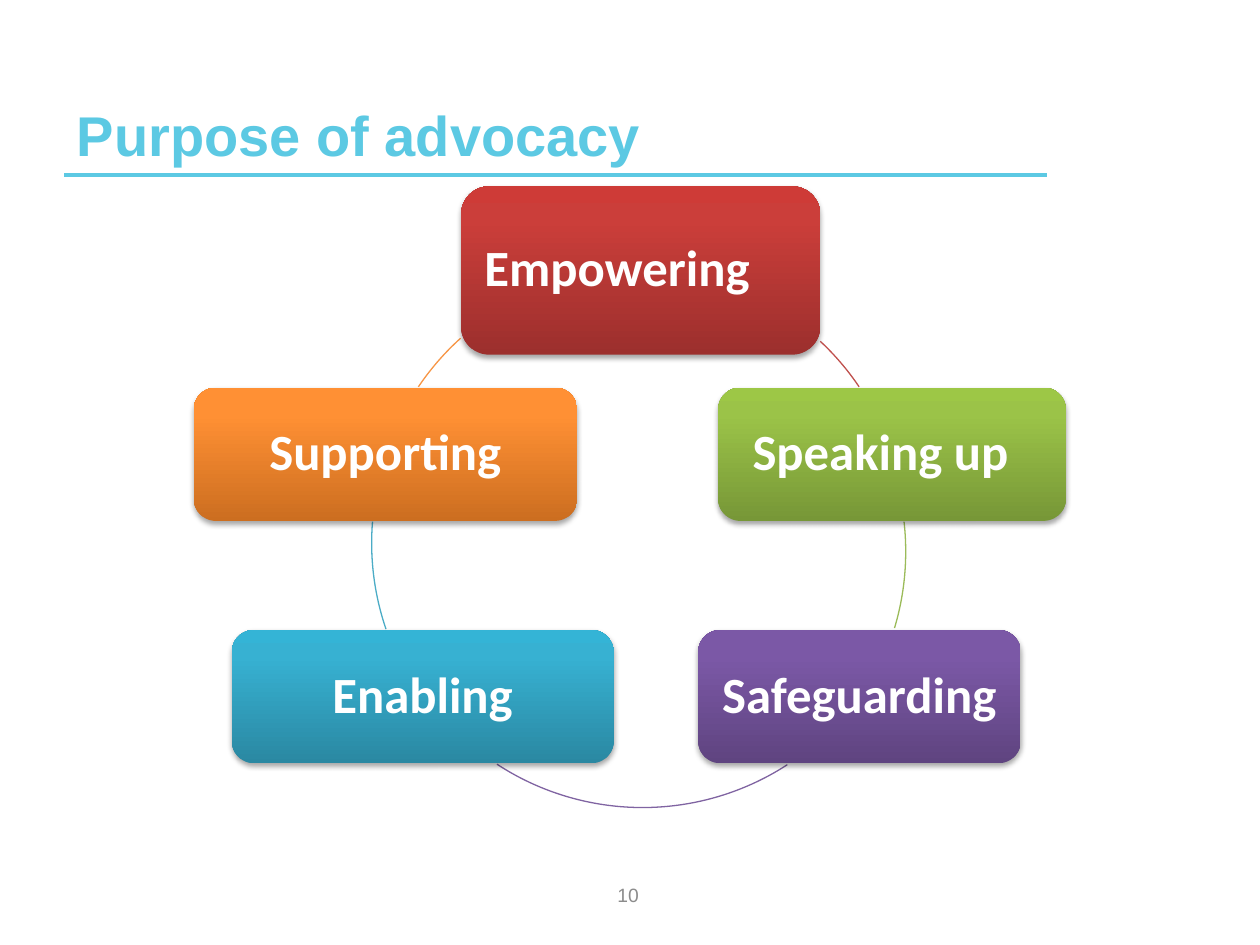
from lxml.etree import SubElement
from pptx import Presentation
from pptx.dml.color import RGBColor
from pptx.enum.shapes import MSO_CONNECTOR, MSO_SHAPE
from pptx.enum.text import MSO_ANCHOR, MSO_AUTO_SIZE, PP_ALIGN
from pptx.oxml import parse_xml
from pptx.oxml.ns import nsdecls, qn
from pptx.util import Pt

TITLE = "Purpose of advocacy"
PAGE_NUMBER = "10"
ACCENT = "5CC9E3"
UPPER_ROW, LOWER_ROW = 221.5, 360
ROW_HEIGHT = 76.2
INSET = 8.64

# text, left, top, width, height, alignment, extra right inset, gradient from bottom to top
BOXES = [
    ("Empowering", 263.5, 106.5, 205.2, 96.2, PP_ALIGN.LEFT, 0, ("9C2F2D", "CB3E3A", "CE3B37")),
    ("Speaking up", 410.4, UPPER_ROW, 198.7, ROW_HEIGHT, PP_ALIGN.CENTER, 13,
     ("779737", "9BC348", "9DC746")),
    ("Safeguarding", 399, LOWER_ROW, 184.3, ROW_HEIGHT, PP_ALIGN.CENTER, 0,
     ("5F4480", "7B58A6", "7C57A8")),
    ("Enabling", 132.5, LOWER_ROW, 218.2, ROW_HEIGHT, PP_ALIGN.CENTER, 0,
     ("2A88A2", "37B1D2", "34B4D6")),
    ("Supporting", 110.7, UPPER_ROW, 219.2, ROW_HEIGHT, PP_ALIGN.CENTER, 0,
     ("CC6E20", "FF9034", "FF9136")),
]
GRADIENT_POSITIONS = (0, 80, 100)

# left and top of the full circle, start and end in degrees clockwise from the right, colour
ARCS = [
    (213.1, 154.1, 313.1, 326, "C0504D"),
    (213.8, 163.4, 353.5, 16.7, "9BBB59"),
    (215.3, 157.7, 57, 123.2, "8064A2"),
    (212.4, 158.4, 161.1, 184.6, "4BACC6"),
    (213.1, 154.1, 214, 227.9, "F79646"),
]
DIAMETER = 303.8


def paint(color_format, color):
    color_format.rgb = RGBColor.from_string(color)


def add_text(frame, text, size, font, color, bold=False, align=PP_ALIGN.LEFT):
    para = frame.paragraphs[0]
    para.alignment = align
    span = para.add_run()
    span.text = text
    span.font.size, span.font.name, span.font.bold = Pt(size), font, bold
    paint(span.font.color, color)
    return para


def fill_gradient(shape, colors):
    """Fill with three stops running upward."""
    stops = "".join(
        f'<a:gs pos="{position * 1000}"><a:srgbClr val="{color}"/></a:gs>'
        for position, color in zip(GRADIENT_POSITIONS, colors))
    gradient = parse_xml(
        f'<a:gradFill {nsdecls("a")} rotWithShape="1"><a:gsLst>{stops}</a:gsLst>'
        '<a:lin ang="16200000" scaled="0"/></a:gradFill>')
    shape._element.spPr.find(qn("a:prstGeom")).addnext(gradient)


def add_soft_shadow(shape):
    shape.shadow.inherit = False
    effects = shape._element.spPr.find(qn("a:effectLst"))
    effects.append(parse_xml(
        f'<a:outerShdw {nsdecls("a")} blurRad="{Pt(3.1)}" dist="{Pt(1.8)}" dir="5400000" '
        'rotWithShape="0"><a:srgbClr val="000000"><a:alpha val="35000"/></a:srgbClr>'
        '</a:outerShdw>'))


def add_arc(page, left, top, start, end, color):
    arc = page.shapes.add_shape(MSO_SHAPE.ARC, Pt(left), Pt(top), Pt(DIAMETER), Pt(DIAMETER))
    # An angle unit is 1/60000 degree, an adjustment unit is 100000 of them.
    for index, angle in enumerate((start, end)):
        arc.adjustments[index] = angle * 0.6
    arc.fill.background()
    arc.line.width = Pt(0.75)
    paint(arc.line.color, color)
    arc.shadow.inherit = False


def add_box(page, text, left, top, width, height, align, extra, colors):
    box = page.shapes.add_shape(
        MSO_SHAPE.ROUNDED_RECTANGLE, Pt(left), Pt(top), Pt(width), Pt(height))
    fill_gradient(box, colors)
    box.line.fill.background()
    add_soft_shadow(box)
    frame = box.text_frame
    frame.word_wrap = True
    frame.vertical_anchor = MSO_ANCHOR.MIDDLE
    frame.margin_left = frame.margin_top = frame.margin_bottom = Pt(INSET)
    frame.margin_right = Pt(INSET + extra)
    add_text(frame, text, 29, "Calibri", "FFFFFF", True, align).line_spacing = 0.9


def main():
    deck = Presentation()
    deck.slide_width, deck.slide_height = Pt(720), Pt(540)
    page = deck.slides.add_slide(deck.slide_layouts[5])

    rule = page.shapes.add_connector(
        MSO_CONNECTOR.STRAIGHT, Pt(36.7), Pt(100), Pt(598.3), Pt(100))
    rule.line.width = Pt(2)
    paint(rule.line.color, ACCENT)
    SubElement(rule._element.spPr, qn("a:effectLst"))

    title = page.shapes.title
    title.left, title.top, title.width, title.height = Pt(36.7), Pt(21), Pt(561.6), Pt(78.5)
    title.text_frame.auto_size = MSO_AUTO_SIZE.NONE
    title.text_frame.vertical_anchor = MSO_ANCHOR.BOTTOM
    add_text(title.text_frame, TITLE, 32, "Arial", ACCENT, True)

    for arc in ARCS:
        add_arc(page, *arc)
    for box in BOXES:
        add_box(page, *box)

    number = page.shapes.add_textbox(Pt(275), Pt(496.8), Pt(168), Pt(28.8))
    number.text_frame.word_wrap = True
    number.text_frame.vertical_anchor = MSO_ANCHOR.MIDDLE
    add_text(number.text_frame, PAGE_NUMBER, 11, "Arial", "8C8C8C", align=PP_ALIGN.CENTER)

    deck.save("out.pptx")


if __name__ == "__main__":
    main()
